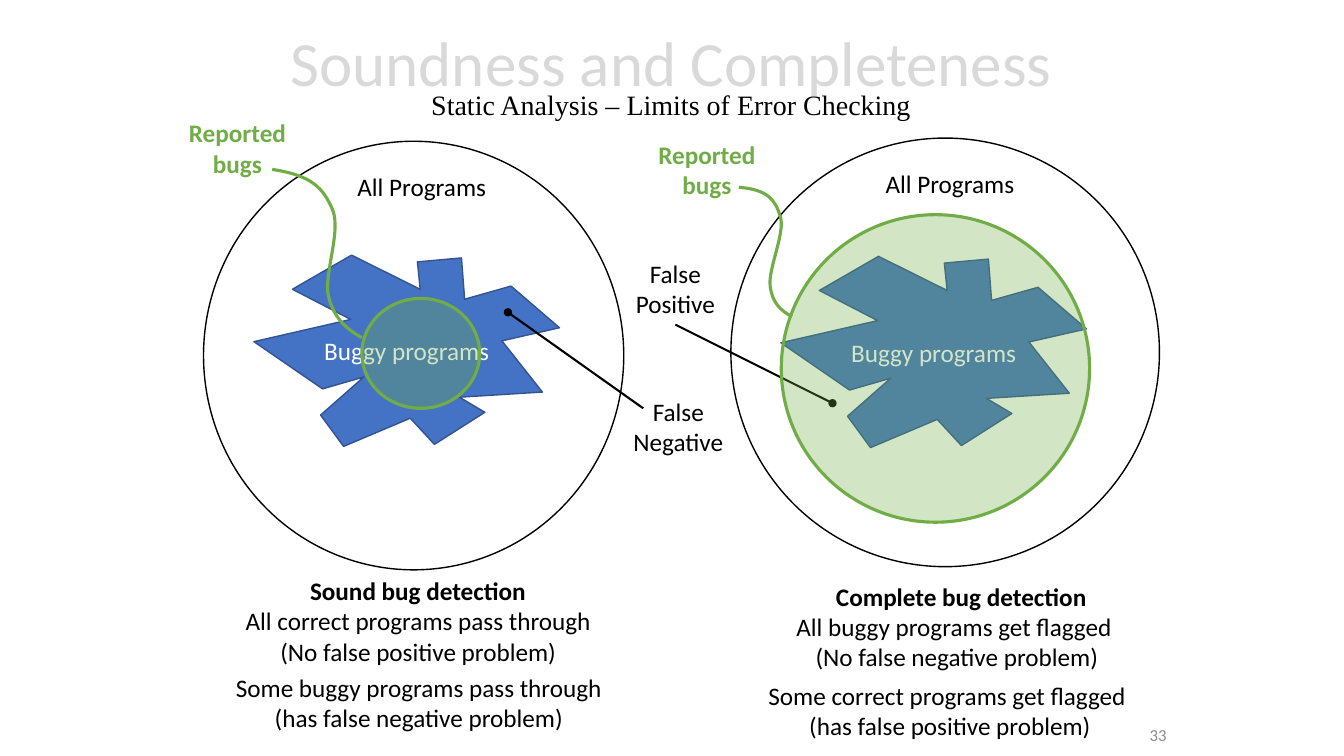
from dataclasses import dataclass

from lxml.etree import SubElement
from pptx import Presentation
from pptx.dml.color import RGBColor
from pptx.enum.shapes import MSO_CONNECTOR, MSO_SHAPE
from pptx.enum.text import MSO_ANCHOR, MSO_AUTO_SIZE, PP_ALIGN
from pptx.oxml.ns import qn
from pptx.util import Cm, Pt


@dataclass(frozen=True)
class Theme:
    font: str = "Calibri"
    subtitle_font: str = "Times New Roman"
    black: str = "000000"
    white: str = "FFFFFF"
    title_grey: str = "D9D9D9"
    number_grey: str = "8C8C8C"
    green: str = "70AD47"
    blue: str = "4472C4"
    dark_blue: str = "325491"
    title_size: float = 45
    subtitle_size: float = 20
    body_size: float = 18
    number_size: float = 12
    thin: float = 1
    pointer: float = 1.5
    thick: float = 2.25


class Diagram:
    def __init__(self, slide, theme):
        self.shapes = slide.shapes
        self.theme = theme

    def add_text(self, paragraph, text, color, size=None, font=None, bold=False):
        run = paragraph.add_run()
        run.text = text
        run.font.name = font or self.theme.font
        run.font.size = Pt(size or self.theme.body_size)
        run.font.color.rgb = RGBColor.from_string(color)
        run.font.bold = bold

    def outline(self, shape, color, width):
        shape.line.color.rgb = RGBColor.from_string(color)
        shape.line.width = Pt(width)

    def paint(self, shape, fill, line, width):
        shape.shadow.inherit = False
        shape.fill.solid()
        shape.fill.fore_color.rgb = RGBColor.from_string(fill)
        self.outline(shape, line, width)

    def frame(self, left, top, width, height, align):
        """Add an empty, wrapping text box anchored in the middle."""
        box = self.shapes.add_textbox(Cm(left), Cm(top), Cm(width), Cm(height))
        box.text_frame.word_wrap = True
        box.text_frame.vertical_anchor = MSO_ANCHOR.MIDDLE
        paragraph = box.text_frame.paragraphs[0]
        paragraph.alignment = align
        return paragraph

    def title(self, heading, subtitle):
        theme = self.theme
        paragraph = self.frame(5.97, 0.23, 21.89, 3.68, PP_ALIGN.CENTER)
        paragraph.line_spacing = 0.7
        self.add_text(paragraph, heading, theme.title_grey, theme.title_size)
        paragraph.add_line_break()
        self.add_text(paragraph, subtitle, theme.black, theme.subtitle_size, theme.subtitle_font)

    def page_number(self, number):
        paragraph = self.frame(23.93, 18.01, 5.72, 1.02, PP_ALIGN.RIGHT)
        self.add_text(paragraph, number, self.theme.number_grey, self.theme.number_size)

    def label(self, left, top, width, *lines, color=None, bold=False):
        """Add centred lines, one paragraph each, in a box that fits them."""
        height = 1.02 if len(lines) == 1 else 1.8
        box = self.shapes.add_textbox(Cm(left), Cm(top), Cm(width), Cm(height))
        frame = box.text_frame
        frame.word_wrap = False
        frame.auto_size = MSO_AUTO_SIZE.SHAPE_TO_FIT_TEXT
        for index, line in enumerate(lines):
            paragraph = frame.add_paragraph() if index else frame.paragraphs[0]
            paragraph.alignment = PP_ALIGN.CENTER
            self.add_text(paragraph, line, color or self.theme.black, bold=bold)
        return box

    def ellipse(self, left, top, width, height):
        return self.shapes.add_shape(
            MSO_SHAPE.OVAL, Cm(left), Cm(top), Cm(width), Cm(height))

    def all_programs(self, left, top, width, height):
        theme = self.theme
        self.paint(self.ellipse(left, top, width, height), theme.white, theme.black, theme.thin)

    def reported_area(self, left, top, width, height):
        theme = self.theme
        area = self.ellipse(left, top, width, height)
        self.paint(area, theme.green, theme.green, theme.thick)
        fill_color = area._element.spPr.find(f"{qn('a:solidFill')}/{qn('a:srgbClr')}")
        SubElement(fill_color, qn("a:alpha"), val="31000")

    def freeform(self, points, close):
        start, *rest = [(Cm(x), Cm(y)) for x, y in points]
        builder = self.shapes.build_freeform(*start)
        builder.add_line_segments(rest, close=close)
        shape = builder.convert_to_shape()
        shape.shadow.inherit = False
        return shape

    def buggy_programs(self, points, dx=0, dy=0):
        theme = self.theme
        blob = self.freeform([(x + dx, y + dy) for x, y in points], close=True)
        self.paint(blob, theme.blue, theme.dark_blue, theme.thin)
        blob.text_frame.vertical_anchor = MSO_ANCHOR.MIDDLE
        paragraph = blob.text_frame.paragraphs[0]
        paragraph.alignment = PP_ALIGN.CENTER
        self.add_text(paragraph, "Buggy programs", theme.white)

    def curve(self, points):
        """Draw a chain of cubic Béziers: a start, then three points for each."""
        shape = self.freeform(points, close=False)
        shape.fill.background()
        self.outline(shape, self.theme.green, self.theme.thick)
        outline = shape._element.spPr.find(f".//{qn('a:path')}")
        segments = outline.findall(qn("a:lnTo"))
        for first in range(0, len(segments), 3):
            bezier = SubElement(outline, qn("a:cubicBezTo"))
            for segment in segments[first:first + 3]:
                bezier.append(segment[0])
                outline.remove(segment)

    def pointer(self, start, end, source=None):
        line = self.shapes.add_connector(
            MSO_CONNECTOR.STRAIGHT, *[Cm(value) for value in (*start, *end)])
        if source is not None:
            line.begin_connect(source, 2)
        self.outline(line, self.theme.black, self.theme.pointer)
        properties = line._element.spPr
        SubElement(properties.find(qn("a:ln")), qn("a:tailEnd"), type="oval")
        SubElement(properties, qn("a:effectLst"))


BUGGY_OUTLINE = [
    (10.59, 7.29), (8.86, 6.43), (7.37, 7.29), (8.84, 8.05), (6.4, 8.61),
    (8.13, 9.8), (9.17, 9.5), (8.08, 10.46), (8.66, 11.25), (10.34, 10.54),
    (10.95, 11.2), (12.22, 10.39), (11.58, 10.01), (13.67, 9.88), (12.65, 8.59),
    (14.1, 8.26), (12.88, 7.21), (11.71, 7.54), (11.63, 6.5), (10.52, 6.6),
]
SOUND_CURVE = [
    (6.86, 4.27), (7.87, 4.42), (8.15, 4.75), (8.38, 5.28), (8.61, 5.82),
    (8.15, 6.93), (8.28, 7.47), (8.41, 8), (8.71, 8.28), (9.12, 8.51),
]
COMPLETE_CURVE = [
    (18.62, 4.72), (19.35, 4.78), (19.53, 5.03), (19.66, 5.44), (19.81, 5.84),
    (19.35, 6.78), (19.41, 7.21), (19.46, 7.62), (19.66, 7.82), (19.96, 7.98),
]


def main():
    deck = Presentation()
    deck.slide_width, deck.slide_height = Cm(33.87), Cm(19.05)
    theme = Theme()
    diagram = Diagram(deck.slides.add_slide(deck.slide_layouts[6]), theme)

    diagram.all_programs(5.13, 3.56, 10.59, 10.8)
    diagram.title("Soundness and Completeness", "Static Analysis – Limits of Error Checking")
    diagram.page_number("33")
    diagram.all_programs(18.42, 3.48, 10.8, 10.8)
    for left, top in ((8.74, 4.19), (22.05, 4.11)):
        diagram.label(left, top, 3.78, "All Programs")
    for left, top in ((4.5, 2.84), (16.33, 3.38)):
        diagram.label(left, top, 2.97, "Reported", "bugs", color=theme.green, bold=True)

    false_positive = diagram.label(15.75, 6.38, 2.54, "False", "Positive")
    diagram.pointer((17.02, 8.18), (20.98, 10.16), false_positive)
    diagram.buggy_programs(BUGGY_OUTLINE)
    diagram.buggy_programs(BUGGY_OUTLINE, 13.28, 0.03)
    diagram.reported_area(9.12, 7.52, 2.97, 2.77)
    diagram.curve(SOUND_CURVE)
    diagram.curve(COMPLETE_CURVE)
    diagram.pointer((16.21, 10.29), (12.8, 7.87))
    diagram.label(15.7, 9.86, 2.79, "False", "Negative")
    diagram.reported_area(19.69, 5.41, 7.77, 7.75)

    diagram.label(7.54, 14.38, 5.99, "Sound bug detection", bold=True)
    diagram.label(5.89, 15.14, 9.3, "All correct programs pass through",
                  "(No false positive problem)")
    diagram.label(5.64, 16.81, 9.83, "Some buggy programs pass through",
                  "(has false negative problem)")
    diagram.label(20.73, 14.53, 6.99, "Complete bug detection", bold=True)
    diagram.label(19.76, 15.27, 8.71, "All buggy programs get flagged ",
                  "(No false negative problem)")
    diagram.label(19.05, 17.02, 9.78, "Some correct programs get flagged ",
                  "(has false positive problem)")
    deck.save("out.pptx")


if __name__ == "__main__":
    main()
